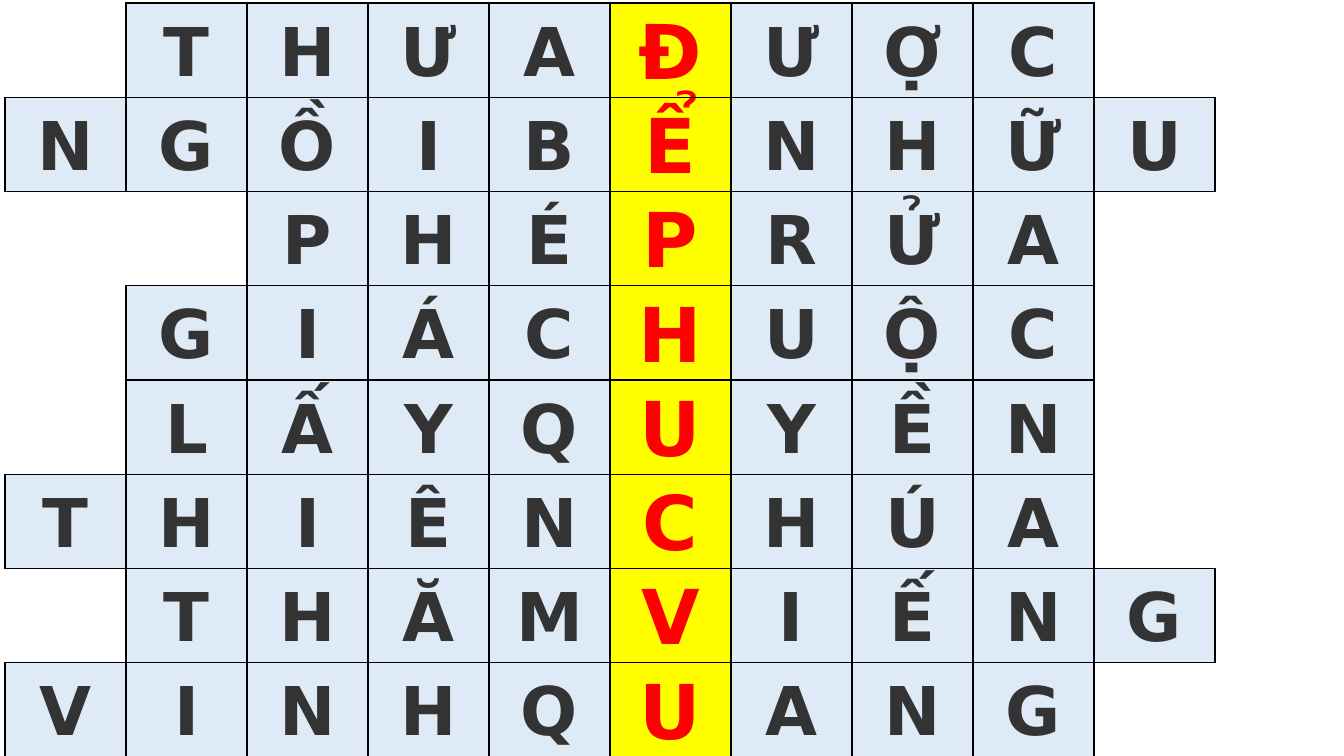
from dataclasses import dataclass

from lxml.etree import SubElement
from pptx import Presentation
from pptx.dml.color import RGBColor
from pptx.enum.text import MSO_ANCHOR as Anchor, PP_ALIGN as Align
from pptx.oxml.ns import qn
from pptx.table import _Cell as Cell
from pptx.util import Inches, Pt

COLORS = {
    "line": "000000",
    "letter": "333333",
    "key_letter": "FF0000",
    "tile": "DEEBF7",
    "key_tile": "FFFF00",
}
FONT = "DejaVu Sans"
COLUMN_COUNT = 11
KEY_COLUMN = 5
COLUMN_WIDTH = 1.2
ROW_HEIGHT = 0.92
SIDES = {"lnL": (0, -1), "lnR": (0, 1), "lnT": (-1, 0), "lnB": (1, 0)}


@dataclass(frozen=True)
class Word:
    letters: str
    start: int

    def letter_at(self, column: int) -> str:
        position = column - self.start
        return self.letters[position] if 0 <= position < len(self.letters) else ""


WORDS = [
    Word("THƯAĐƯỢC", 1),
    Word("NGỒIBỂNHỮU", 0),
    Word("PHÉPRỬA", 2),
    Word("GIÁCHUỘC", 1),
    Word("LẤYQUYỀN", 1),
    Word("THIÊNCHÚA", 0),
    Word("THĂMVIẾNG", 1),
    Word("VINHQUANG", 0),
]


def letter_in(row: int, column: int) -> str:
    return WORDS[row].letter_at(column) if 0 <= row < len(WORDS) else ""


def draw_borders(cell: Cell, row: int, column: int) -> None:
    properties = cell._tc.get_or_add_tcPr()
    for side, (down, right) in SIDES.items():
        lined = letter_in(row, column) or letter_in(row + down, column + right)
        line = SubElement(properties, qn(f"a:{side}"), w=str(Pt(1)))
        if lined:
            fill = SubElement(line, qn("a:solidFill"))
            SubElement(fill, qn("a:srgbClr"), val=COLORS["line"])
        else:
            SubElement(line, qn("a:noFill"))


def write_letter(cell: Cell, letter: str, is_key: bool) -> None:
    cell.fill.solid()
    cell.fill.fore_color.rgb = RGBColor.from_string(COLORS["key_tile" if is_key else "tile"])
    cell.vertical_anchor = Anchor.MIDDLE
    cell.margin_left = cell.margin_right = Inches(0.07)
    cell.margin_top = cell.margin_bottom = 0
    paragraph = cell.text_frame.paragraphs[0]
    paragraph.alignment = Align.CENTER
    paragraph.line_spacing = 1.07
    paragraph.space_after = Pt(8)
    run = paragraph.add_run()
    run.text = letter
    run.font.name = FONT
    run.font.bold = True
    run.font.size = Pt(54 if is_key else 48)
    run.font.color.rgb = RGBColor.from_string(COLORS["key_letter" if is_key else "letter"])


def main() -> None:
    presentation = Presentation()
    presentation.slide_width = Inches(13.33)
    presentation.slide_height = Inches(7.5)
    slide = presentation.slides.add_slide(presentation.slide_layouts[6])
    table = slide.shapes.add_table(
        len(WORDS), COLUMN_COUNT, Inches(0.05), Inches(0.03),
        Inches(COLUMN_WIDTH * COLUMN_COUNT), Inches(ROW_HEIGHT * len(WORDS)),
    ).table
    table.first_row = False
    table.horz_banding = False
    for row, word in enumerate(WORDS):
        for column in range(COLUMN_COUNT):
            cell = table.cell(row, column)
            draw_borders(cell, row, column)
            letter = word.letter_at(column)
            if letter:
                write_letter(cell, letter, column == KEY_COLUMN)
            else:
                cell.fill.background()
    presentation.save("out.pptx")


if __name__ == "__main__":
    main()
